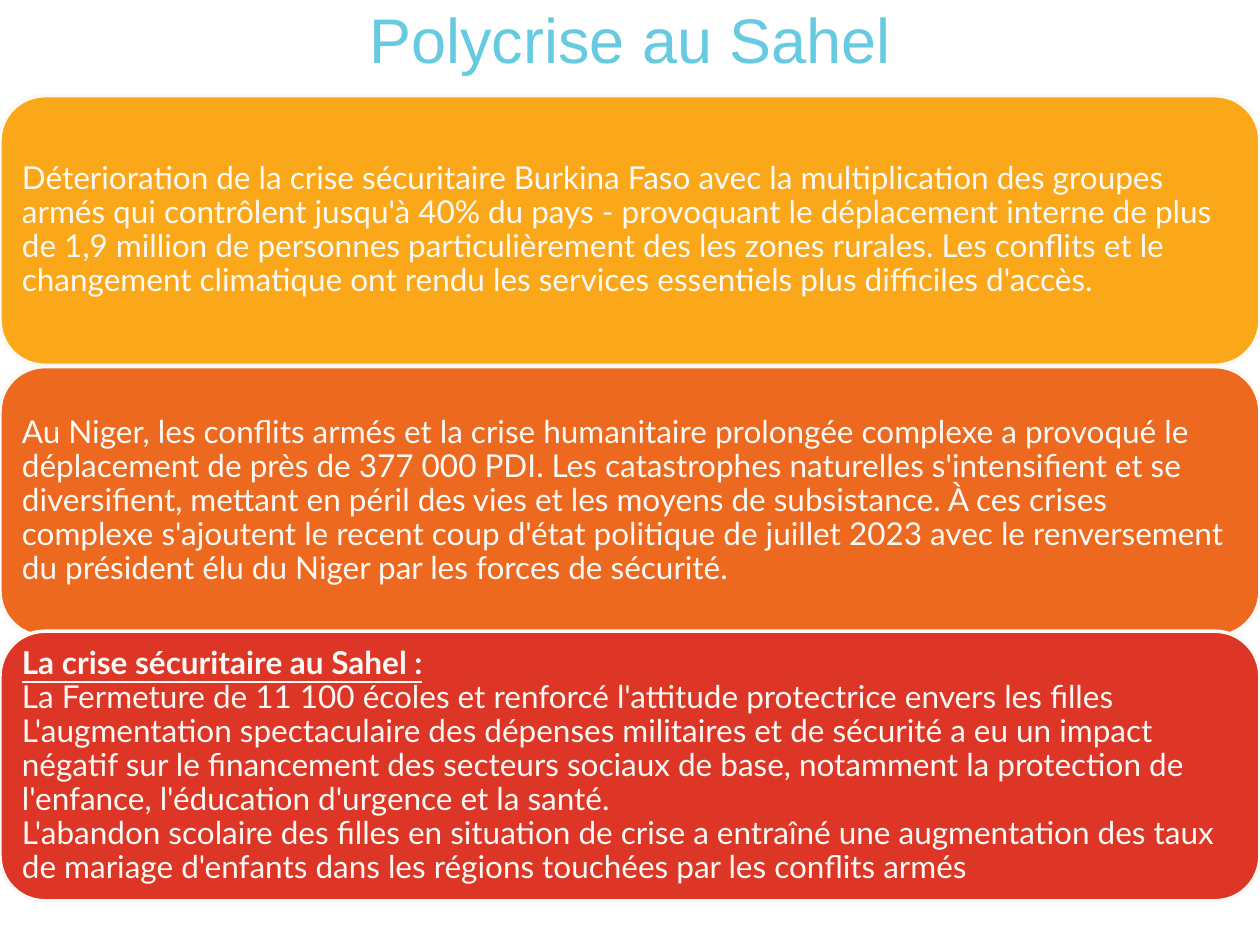
from pptx import Presentation
from pptx.dml.color import RGBColor
from pptx.enum.shapes import MSO_SHAPE
from pptx.enum.text import MSO_ANCHOR, PP_ALIGN
from pptx.util import Inches, Pt

ROUNDED = MSO_SHAPE.ROUNDED_RECTANGLE
MIDDLE = MSO_ANCHOR.MIDDLE
CENTER = PP_ALIGN.CENTER
LEFT = PP_ALIGN.LEFT

CREAM = "FAF9F5"
SKY = "66CBE1"
CARD_HEIGHT = 2.14

BURKINA = [
    "Déterioration de la crise sécuritaire Burkina Faso avec la multiplication des groupes "
    "armés qui contrôlent jusqu'à 40% du pays - provoquant le déplacement interne de plus "
    "de 1,9 million de personnes particulièrement des les zones rurales. Les conflits et le "
    "changement climatique ont rendu les services essentiels plus difficiles d'accès.",
]
NIGER = [
    "Au Niger, les conflits armés et la crise humanitaire prolongée complexe a provoqué le "
    "déplacement de près de 377 000 PDI. Les catastrophes naturelles s'intensifient et se "
    "diversifient, mettant en péril des vies et les moyens de subsistance. À ces crises "
    "complexe s'ajoutent le recent coup d'état politique de juillet 2023 avec le renversement "
    "du président élu du Niger par les forces de sécurité.",
]
SAHEL_HEADING = "La crise sécuritaire au Sahel :"
SAHEL = [
    SAHEL_HEADING,
    "La Fermeture de 11 100 écoles et renforcé l'attitude protectrice envers les filles",
    "L'augmentation spectaculaire des dépenses militaires et de sécurité a eu un impact "
    "négatif sur le financement des secteurs sociaux de base, notamment la protection de "
    "l'enfance, l'éducation d'urgence et la santé.",
    "L'abandon scolaire des filles en situation de crise a entraîné une augmentation des taux "
    "de mariage d'enfants dans les régions touchées par les conflits armés",
]
CARDS = [
    (0.76, "FAA819", BURKINA),
    (2.91, "EC691F", NIGER),
    (5.01, "DD3626", SAHEL),
]


def color(value):
    return RGBColor.from_string(value)


def add_run(paragraph, text, font_name, size, font_color):
    run = paragraph.add_run()
    run.text = text
    run.font.name = font_name
    run.font.size = Pt(size)
    run.font.color.rgb = color(font_color)
    return run


def add_title(slide, left, top, width, height, text):
    box = slide.shapes.add_textbox(Inches(left), Inches(top), Inches(width), Inches(height))
    frame = box.text_frame
    frame.word_wrap = True
    frame.vertical_anchor = MIDDLE
    paragraph = frame.paragraphs[0]
    paragraph.alignment = CENTER
    add_run(paragraph, text, "Arial", 36, SKY)


def add_card(slide, left, top, width, height, fill, lines):
    shape = slide.shapes.add_shape(
        ROUNDED, Inches(left), Inches(top), Inches(width), Inches(height)
    )
    shape.shadow.inherit = False
    shape.fill.solid()
    shape.fill.fore_color.rgb = color(fill)
    shape.line.color.rgb = color(CREAM)
    shape.line.width = Pt(2)

    frame = shape.text_frame
    frame.word_wrap = True
    frame.vertical_anchor = MIDDLE
    frame.margin_left = frame.margin_right = Inches(0.07)
    frame.margin_top = frame.margin_bottom = Inches(0.07)
    paragraph = frame.paragraphs[0]
    paragraph.alignment = LEFT
    paragraph.line_spacing = 0.9
    for index, line in enumerate(lines):
        if index:
            paragraph.add_line_break()
        run = add_run(paragraph, line, "Lato", 18, CREAM)
        if line == SAHEL_HEADING:
            run.font.bold = True
            run.font.underline = True


def main():
    presentation = Presentation()
    presentation.slide_width = Inches(10)
    presentation.slide_height = Inches(7.5)
    slide = presentation.slides.add_slide(presentation.slide_layouts[6])
    add_title(slide, 0.74, -0.16, 8.52, 0.92, "Polycrise au Sahel")
    for top, fill, lines in CARDS:
        add_card(slide, 0, top, 10, CARD_HEIGHT, fill, lines)
    presentation.save("out.pptx")


if __name__ == "__main__":
    main()
